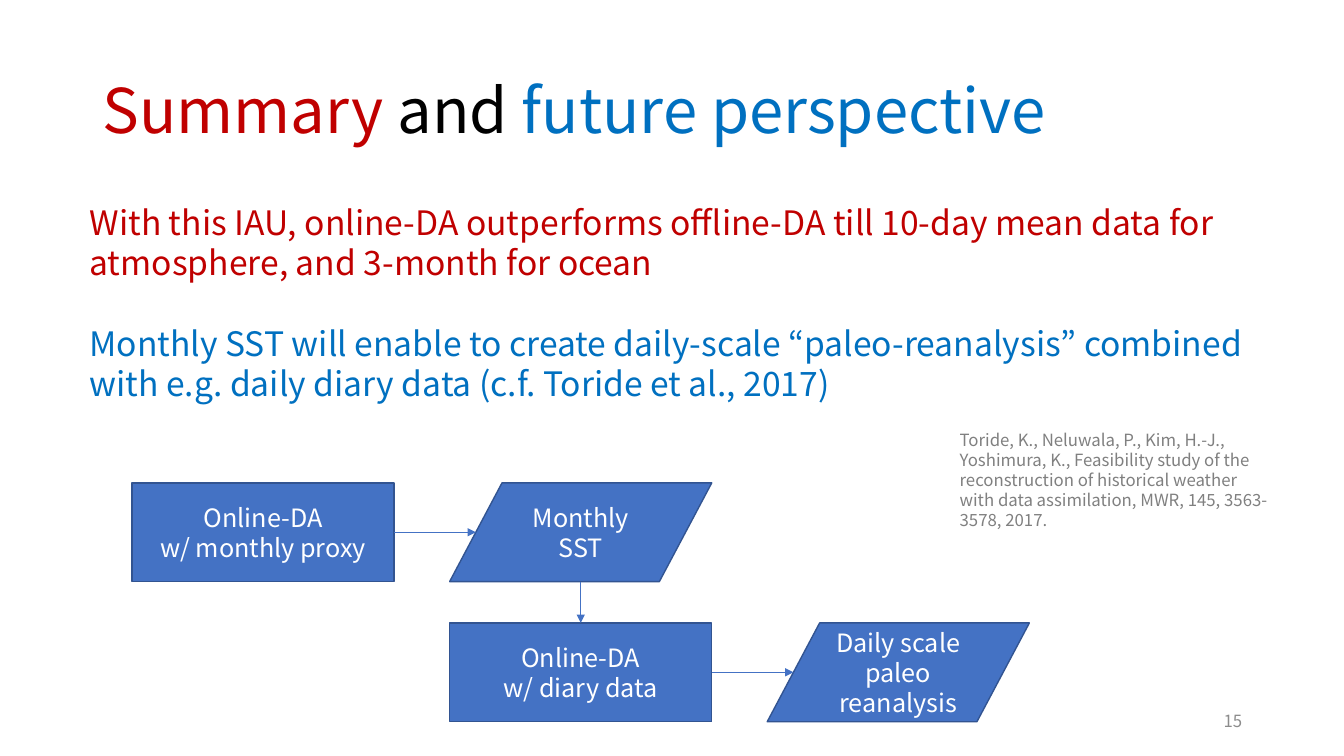
from lxml.etree import SubElement
from pptx import Presentation
from pptx.dml.color import RGBColor
from pptx.enum.shapes import MSO_CONNECTOR, MSO_SHAPE
from pptx.enum.text import MSO_ANCHOR, PP_ALIGN
from pptx.oxml.ns import qn
from pptx.util import Inches, Pt

FONT = "Noto Sans CJK JP"
RED, BLUE, BLACK, WHITE = "C00000", "0070C0", "000000", "FFFFFF"
GREY, PALE_GREY = "808080", "8C8C8C"
FILL, OUTLINE = "4472C4", "325491"

TITLE = [[("Summary", RED), (" and ", BLACK), ("future perspective", BLUE)]]
POINTS = [
    [("With this IAU, online-DA outperforms offline-DA till 10-day mean data "
      "for atmosphere, and 3-month for ocean", RED)],
    [("Monthly SST will enable to create daily-scale “paleo-reanalysis” combined "
      "with e.g. daily diary data (c.f. Toride et al., 2017)", BLUE)],
]
REFERENCE = [[(
    "Toride, K., Neluwala, P., Kim, H.-J., Yoshimura, K., Feasibility study of the "
    "reconstruction of historical weather with data assimilation, MWR, 145, "
    "3563-3578, 2017.", GREY)]]


def color(value):
    """Turn a hex string into a colour."""
    return RGBColor.from_string(value)


def write(frame, paragraphs, size, anchor=MSO_ANCHOR.TOP, **formats):
    """Fill a text frame with paragraphs of (text, colour) spans."""
    frame.word_wrap = True
    frame.vertical_anchor = anchor
    for index, spans in enumerate(paragraphs):
        para = frame.add_paragraph() if index else frame.paragraphs[0]
        for name, value in formats.items():
            if index or name != "space_before":
                setattr(para, name, value)
        for text, shade in spans:
            for number, line in enumerate(text.split("\n")):
                if number:
                    para.add_line_break()
                span = para.add_run()
                span.text = line
                for name, value in {"name": FONT, "size": Pt(size)}.items():
                    setattr(span.font, name, value)
                span.font.color.rgb = color(shade)


def add_text(page, box, paragraphs, size, **formats):
    """Place a text box at the given left, top, width and height."""
    frame = page.shapes.add_textbox(*map(Inches, box)).text_frame
    write(frame, paragraphs, size, **formats)


def add_step(page, box, kind, text):
    """Draw one labelled flowchart step."""
    step = page.shapes.add_shape(kind, *map(Inches, box))
    step.shadow.inherit = False
    step.fill.solid()
    step.fill.fore_color.rgb = color(FILL)
    step.line.color.rgb = color(OUTLINE)
    step.line.width = Pt(1)
    write(step.text_frame, [[(text, WHITE)]], 18, MSO_ANCHOR.MIDDLE,
          alignment=PP_ALIGN.CENTER)
    return step


def add_arrow(page, start, end):
    """Draw a thin straight arrow between two points."""
    arrow = page.shapes.add_connector(
        MSO_CONNECTOR.STRAIGHT, *map(Inches, (*start, *end)))
    arrow.line.color.rgb = color(FILL)
    arrow.line.width = Pt(0.5)
    SubElement(arrow.line._get_or_add_ln(), qn("a:tailEnd"), type="triangle")
    SubElement(arrow._element.spPr, qn("a:effectLst"))
    return arrow


def add_flow(page, box):
    """Draw two rows of process and result, the second row one column right."""
    left, top, width, height = box
    step_width, step_height = 2.6, 0.98
    column_pitch = (width - step_width) / 2
    row_pitch = height - step_height
    slant = step_width / 10
    process, result = MSO_SHAPE.FLOWCHART_PROCESS, MSO_SHAPE.FLOWCHART_DATA
    rows = [("Online-DA\nw/ monthly proxy", "Monthly SST"),
            ("Online-DA\nw/ diary data", "Daily scale paleo reanalysis")]
    for row, (process_text, result_text) in enumerate(rows):
        x, y = left + row * column_pitch, top + row * row_pitch
        result_x, middle = x + column_pitch, y + step_height / 2
        source = add_step(page, (x, y, step_width, step_height), process, process_text)
        add_step(page, (result_x, y, step_width, step_height), result, result_text)
        across = add_arrow(page, (x + step_width, middle), (result_x + slant, middle))
        across.begin_connect(source, 3)
        if row:
            center = x + step_width / 2
            down = add_arrow(page, (center, y - row_pitch + step_height), (center, y))
            down.end_connect(source, 0)


def add_summary_slide(deck):
    """Build the summary slide with its text and flowchart."""
    page = deck.slides.add_slide(deck.slide_layouts[6])
    add_text(page, (0.92, 0.4, 11.5, 1.45), TITLE, 44,
             anchor=MSO_ANCHOR.MIDDLE, line_spacing=0.9)
    add_text(page, (0.79, 1.95, 12.25, 2.12), POINTS, 24, space_before=Pt(29))
    add_text(page, (9.42, 4.21, 3.3, 1.11), REFERENCE, 12)
    add_text(page, (9.42, 6.95, 3, 0.4), [[("15", PALE_GREY)]], 12,
             anchor=MSO_ANCHOR.MIDDLE, alignment=PP_ALIGN.RIGHT)
    add_flow(page, (1.31, 4.79, 8.9, 2.37))


def main():
    """Create and save the deck."""
    deck = Presentation()
    deck.slide_width, deck.slide_height = Inches(13.33), Inches(7.5)
    add_summary_slide(deck)
    deck.save("out.pptx")


if __name__ == "__main__":
    main()
